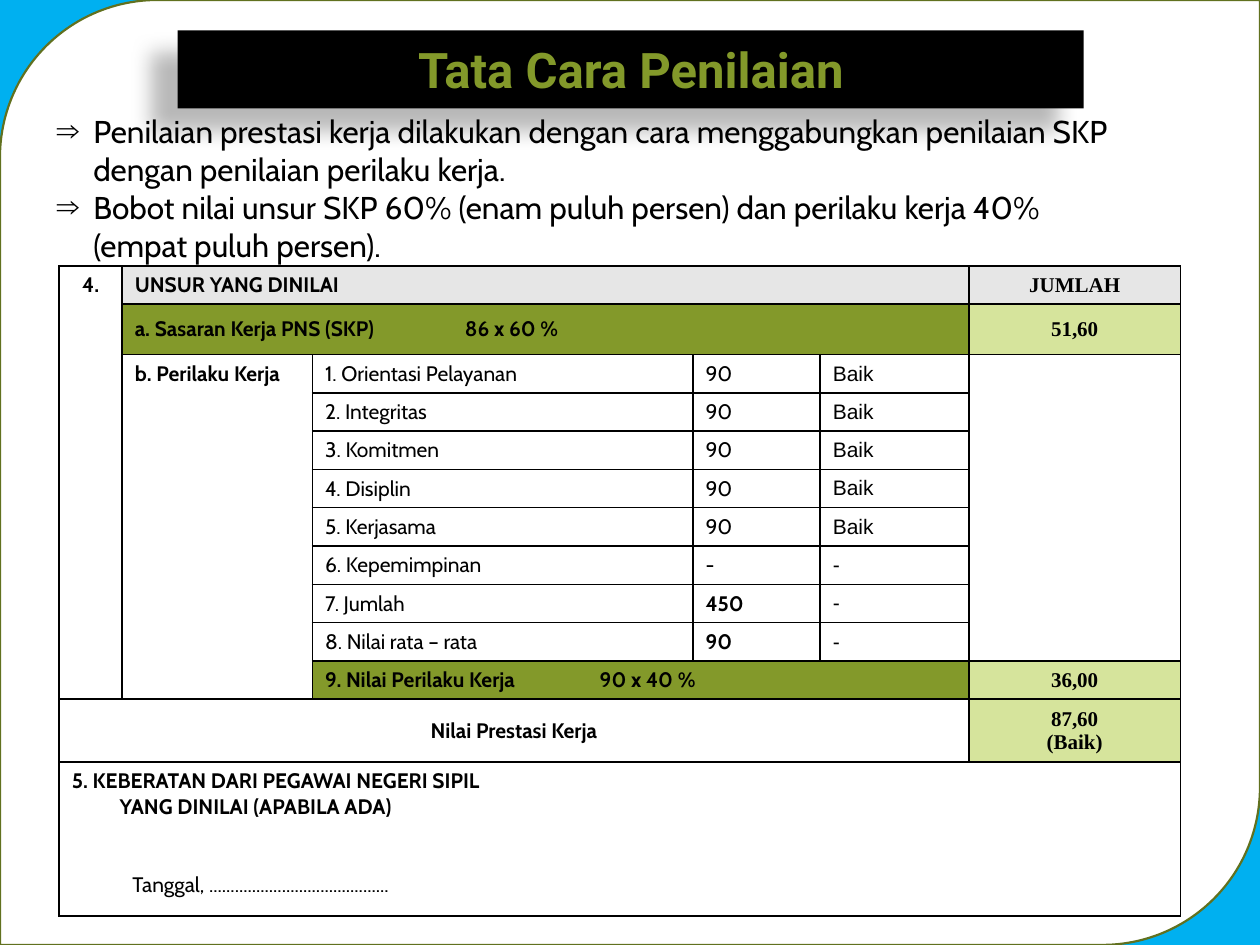
from lxml import etree
from pptx import Presentation
from pptx import util as u
from pptx.dml.color import RGBColor
from pptx.enum import shapes, text
from pptx.oxml import ns

Inches, Pt = u.Inches, u.Pt
MID, TOP = text.MSO_ANCHOR.MIDDLE, text.MSO_ANCHOR.TOP
LEFT, MIDST = text.PP_ALIGN.LEFT, text.PP_ALIGN.CENTER


class Theme:
    sky, white, black = "00B0F0", "FFFFFF", "000000"
    olive, edge, lime, gray = "83992A", "61711F", "D6E49C", "E6E6E6"
    head, body, times, arial = "Roboto", "Cabin", "Times New Roman", "Arial"
    big, mid, small = 28, 18, 12


def style(par, face, size, bold=False, color=Theme.black, align=LEFT):
    par.alignment = align
    for run in par.runs:
        run.font.name, run.font.size, run.font.bold = face, Pt(size), bold
        run.font.color.rgb = RGBColor.from_string(color)


def put(cell, words, face=Theme.body, bold=False, align=LEFT, fill=None,
        anchor=MID, tab=None):
    cell.text_frame.text = words
    cell.vertical_anchor = anchor
    for par in cell.text_frame.paragraphs:
        if tab:
            stops = etree.SubElement(par._p.get_or_add_pPr(), ns.qn("a:tabLst"))
            etree.SubElement(stops, ns.qn("a:tab"), pos=str(Inches(tab)), algn="l")
        style(par, face, Theme.small, bold, align=align)
    if fill:
        cell.fill.solid()
        cell.fill.fore_color.rgb = RGBColor.from_string(fill)


deck = Presentation()
deck.slide_width, deck.slide_height = Inches(10), Inches(7.5)
slide = deck.slides.add_slide(deck.slide_layouts[1])
slide.background.fill.solid()
slide.background.fill.fore_color.rgb = RGBColor.from_string(Theme.sky)

# White panel behind everything
panel = slide.shapes.add_shape(shapes.MSO_SHAPE.ROUND_2_DIAG_RECTANGLE,
                               0, 0, Inches(10), Inches(7.5))
panel.shadow.inherit = False
panel.fill.solid()
panel.fill.fore_color.rgb = RGBColor.from_string(Theme.white)
panel.line.color.rgb = RGBColor.from_string(Theme.edge)
panel.line.width = Pt(1.25)
slide.shapes._spTree.insert(2, panel._element)

# Title bar with a soft shadow to the lower left
title = slide.shapes.title
title.left, title.top = Inches(1.41), Inches(0.24)
title.width, title.height = Inches(7.19), Inches(0.62)
title.fill.solid()
title.fill.fore_color.rgb = RGBColor.from_string(Theme.black)
title.text_frame.text = "Tata Cara Penilaian"
title.text_frame.vertical_anchor = MID
title.text_frame.auto_size = text.MSO_AUTO_SIZE.NONE
style(title.text_frame.paragraphs[0], Theme.head, Theme.big, True, Theme.olive, MIDST)
title.shadow.inherit = False
glow = etree.SubElement(title._element.spPr.find(ns.qn("a:effectLst")),
                        ns.qn("a:outerShdw"), blurRad=str(Pt(11.8)),
                        dist=str(Pt(19.7)), dir=str(141 * 60000),
                        algn="ctr", rotWithShape="0")
tint = etree.SubElement(glow, ns.qn("a:srgbClr"), val=Theme.black)
etree.SubElement(tint, ns.qn("a:alpha"), val="28000")

# Rules of the rating
rules = slide.placeholders[1]
rules.left, rules.top = Inches(0.35), Inches(0.84)
rules.width, rules.height = Inches(8.74), Inches(1.31)
frame = rules.text_frame
frame.text = (
    "Penilaian prestasi kerja dilakukan dengan cara menggabungkan penilaian SKP "
    "dengan penilaian perilaku kerja.\n"
    "Bobot nilai unsur SKP 60% (enam puluh persen) dan perilaku kerja 40% "
    "(empat puluh persen).")
frame.vertical_anchor = TOP
frame.auto_size = text.MSO_AUTO_SIZE.NONE
for par in frame.paragraphs:
    props = par._p.get_or_add_pPr()
    props.set("marL", str(Inches(0.29)))
    props.set("indent", str(-Inches(0.29)))
    etree.SubElement(props, ns.qn("a:buChar"), char="⇒")
    par.space_before = Pt(0)
    style(par, Theme.body, Theme.mid)

# Score table
widths = [0.5, 1.51, 3.02, 1.01, 1.18, 1.68]
heights = [0.3, 0.4] + [0.3] * 9 + [0.5, 1.22]
grid = slide.shapes.add_table(len(heights), len(widths), Inches(0.47), Inches(2.11),
                              Inches(sum(widths)), Inches(sum(heights))).table
grid.first_row = grid.horz_banding = False
for col, width in zip(grid.columns, widths):
    col.width = Inches(width)
for row, height in zip(grid.rows, heights):
    row.height = Inches(height)

# Black borders, no fill
for cell in grid.iter_cells():
    cell.fill.background()
    props = cell._tc.get_or_add_tcPr()
    for spot, side in enumerate(("a:lnL", "a:lnR", "a:lnT", "a:lnB")):
        line = etree.Element(ns.qn(side), w=str(Pt(1)))
        paint = etree.SubElement(line, ns.qn("a:solidFill"))
        etree.SubElement(paint, ns.qn("a:srgbClr"), val=Theme.black)
        props.insert(spot, line)

# Merged areas: first row, first column, last row, last column
for r1, c1, r2, c2 in [(0, 0, 10, 0), (0, 1, 0, 4), (1, 1, 1, 4), (2, 1, 10, 1),
                       (2, 5, 9, 5), (10, 2, 10, 4), (11, 0, 11, 4), (12, 0, 12, 5)]:
    grid.cell(r1, c1).merge(grid.cell(r2, c2))

# Headings and weighted lines
put(grid.cell(0, 0), "4.", bold=True, align=MIDST, anchor=TOP)
put(grid.cell(0, 1), "UNSUR YANG DINILAI", bold=True, fill=Theme.gray)
put(grid.cell(1, 1), "a. Sasaran Kerja PNS (SKP)\t86 x 60 %", bold=True,
    fill=Theme.olive, tab=2.62)
put(grid.cell(2, 1), "b. Perilaku Kerja", bold=True, anchor=TOP)
put(grid.cell(10, 2), "9. Nilai Perilaku Kerja\t90 x 40 %", bold=True,
    fill=Theme.olive, anchor=TOP, tab=2.18)
put(grid.cell(11, 0), "Nilai Prestasi Kerja", bold=True, align=MIDST)

# Totals column
for row, words, fill in [(0, "JUMLAH", Theme.gray), (1, "51,60", Theme.lime),
                         (10, "36,00", Theme.lime), (11, "87,60\n(Baik)", Theme.lime)]:
    put(grid.cell(row, 5), words, Theme.times, True, MIDST, fill)

# Behaviour scores
scores = [("Orientasi Pelayanan", "90", "Baik"), ("Integritas", "90", "Baik"),
          ("Komitmen", "90", "Baik"), ("Disiplin", "90", "Baik"),
          ("Kerjasama", "90", "Baik"), ("Kepemimpinan", "-", "-"),
          ("Jumlah", "450", "-"), ("Nilai rata – rata", "90", "-")]
for num, (name, score, grade) in enumerate(scores, 1):
    put(grid.cell(num + 1, 2), f"{num}. {name}")
    put(grid.cell(num + 1, 3), score, bold=num > 6)
    put(grid.cell(num + 1, 4), grade, Theme.arial)

# Objection
note = grid.cell(12, 0)
put(note, "5. KEBERATAN DARI PEGAWAI NEGERI SIPIL\nYANG DINILAI (APABILA ADA)\n"
    "Tanggal, ..........................................", bold=True, anchor=TOP)
_, claim, date = note.text_frame.paragraphs
claim._p.get_or_add_pPr().set("marL", str(Inches(0.38)))
date._p.get_or_add_pPr().set("marL", str(Inches(0.48)))
date.space_before = Pt(30)
style(date, Theme.body, Theme.small)

deck.save("out.pptx")
